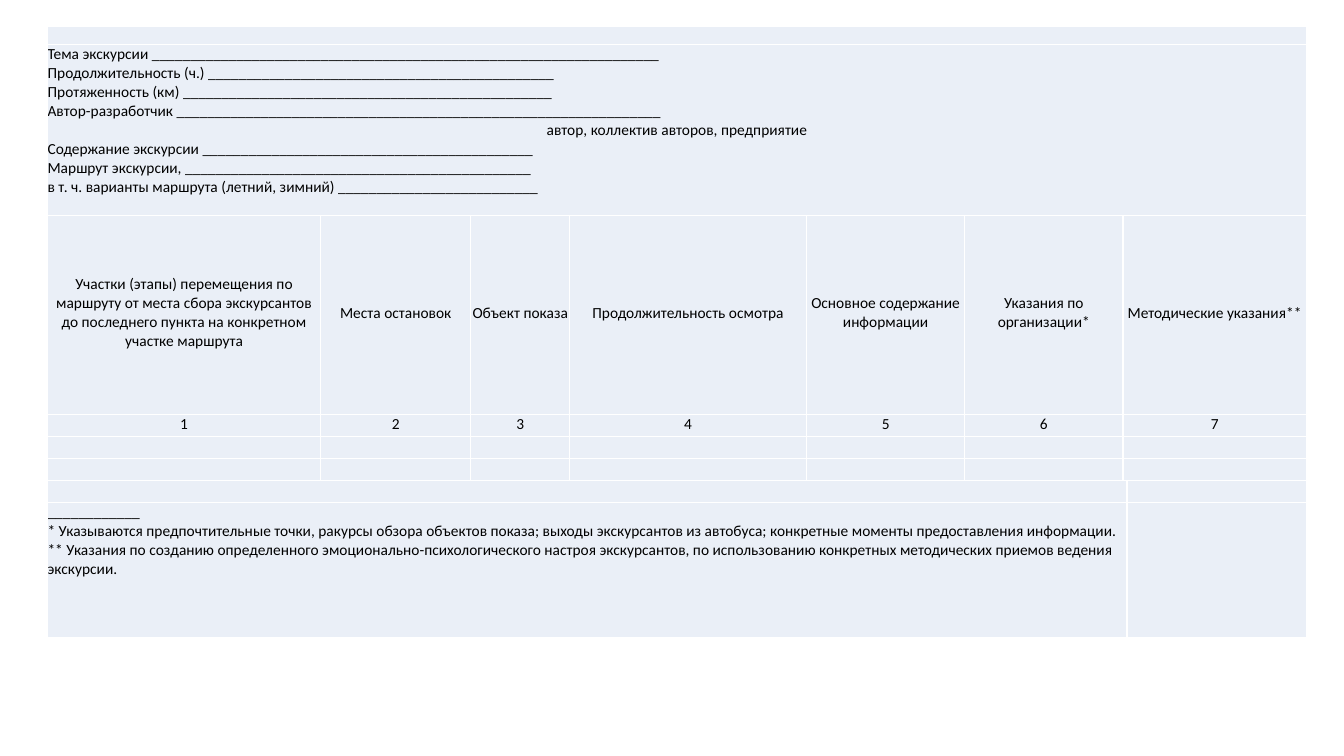
from lxml import etree
from pptx import Presentation
from pptx.dml.color import RGBColor
from pptx.enum.text import MSO_ANCHOR, PP_ALIGN
from pptx.oxml.ns import qn
from pptx.util import Pt

CENTER, LEFT = PP_ALIGN.CENTER, PP_ALIGN.LEFT
MIDDLE, TOP = MSO_ANCHOR.MIDDLE, MSO_ANCHOR.TOP
BLACK = RGBColor(0x00, 0x00, 0x00)
WHITE = RGBColor(0xFF, 0xFF, 0xFF)
PALE_BLUE = RGBColor(0xEA, 0xEF, 0xF7)
FONT = "Calibri"

# Label and number of underscores to fill in
EXCURSION_FIELDS = [
    ("Тема экскурсии", 66),
    ("Продолжительность (ч.)", 45),
    ("Протяженность (км)", 48),
    ("Автор-разработчик", 63),
    ("автор, коллектив авторов, предприятие", 0),
    ("Содержание экскурсии", 43),
    ("Маршрут экскурсии,", 45),
    ("в т. ч. варианты маршрута (летний, зимний)", 26),
]
ROUTE_HEADINGS = [
    "Участки (этапы) перемещения по маршруту от места сбора экскурсантов "
    "до последнего пункта на конкретном участке маршрута",
    "Места остановок",
    "Объект показа",
    "Продолжительность осмотра",
    "Основное содержание информации",
    "Указания по организации*",
    "Методические указания**",
]
FOOTNOTES = [
    "_" * 12,
    "* Указываются предпочтительные точки, ракурсы обзора объектов показа; "
    "выходы экскурсантов из автобуса; конкретные моменты предоставления информации.",
    "** Указания по созданию определенного эмоционально-психологического настроя "
    "экскурсантов, по использованию конкретных методических приемов ведения экскурсии.",
]
ROUTE_COLUMNS = [195.12, 107.28, 70.56, 169.2, 113.04, 113.04, 2.88, 128.16]
ROUTE_ROWS = [144.72, 15.84, 15.84, 15.84, 15.84, 96.48]
LAST_COLUMN = len(ROUTE_COLUMNS) - 1


def write_text(cell, lines, align=LEFT, anchor=TOP, size=11, color=BLACK):
    cell.vertical_anchor = anchor
    cell.text_frame.text = "\n".join(lines)
    for paragraph in cell.text_frame.paragraphs:
        paragraph.alignment = align
        paragraph.font.size = Pt(size)
        for run in paragraph.runs:
            run.font.name = FONT
            run.font.size = Pt(size)
            run.font.color.rgb = color


def style_cell(cell):
    """Give the cell white borders, a pale fill, no margins and a small font."""
    cell.margin_left = cell.margin_right = cell.margin_top = cell.margin_bottom = 0
    properties = cell._tc.get_or_add_tcPr()
    for side in ("lnL", "lnR", "lnT", "lnB"):
        line = etree.SubElement(properties, qn(f"a:{side}"), w=str(Pt(1)))
        fill = etree.SubElement(line, qn("a:solidFill"))
        etree.SubElement(fill, qn("a:srgbClr"), val=str(WHITE))
    cell.fill.solid()
    cell.fill.fore_color.rgb = PALE_BLUE
    write_text(cell, [""], size=10)


def add_plain_table(slide, left, top, columns, rows):
    frame = slide.shapes.add_table(
        len(rows), len(columns), Pt(left), Pt(top), Pt(sum(columns)), Pt(sum(rows)))
    table = frame.table
    table.first_row = table.horz_banding = False
    for column, width in zip(table.columns, columns):
        column.width = Pt(width)
    for row, height in zip(table.rows, rows):
        row.height = Pt(height)
    for cell in table.iter_cells():
        style_cell(cell)
    return table


def add_route_table(slide, left, top):
    table = add_plain_table(slide, left, top, ROUTE_COLUMNS, ROUTE_ROWS)
    for row in range(4):
        table.cell(row, LAST_COLUMN - 1).merge(table.cell(row, LAST_COLUMN))
    for row in (4, 5):
        table.cell(row, 0).merge(table.cell(row, LAST_COLUMN - 1))
    for column, heading in enumerate(ROUTE_HEADINGS):
        write_text(table.cell(0, column), [heading], align=CENTER, anchor=MIDDLE)
        write_text(table.cell(1, column), [str(column + 1)], align=CENTER)
    write_text(table.cell(5, 0), FOOTNOTES)


def add_excursion_table(slide, left, top):
    table = add_plain_table(slide, left, top, [sum(ROUTE_COLUMNS)], [13, 122])
    cell = table.cell(1, 0)
    write_text(cell, [f"{label} {'_' * blanks}" if blanks else label
                      for label, blanks in EXCURSION_FIELDS])
    for paragraph, (_, blanks) in zip(cell.text_frame.paragraphs, EXCURSION_FIELDS):
        if not blanks:
            paragraph.alignment = CENTER


def main():
    presentation = Presentation()
    presentation.slide_width, presentation.slide_height = Pt(960), Pt(540)
    slide = presentation.slides.add_slide(presentation.slide_layouts[6])
    add_route_table(slide, left=34, top=151.2)
    add_excursion_table(slide, left=34, top=19)
    presentation.save("out.pptx")


if __name__ == "__main__":
    main()
